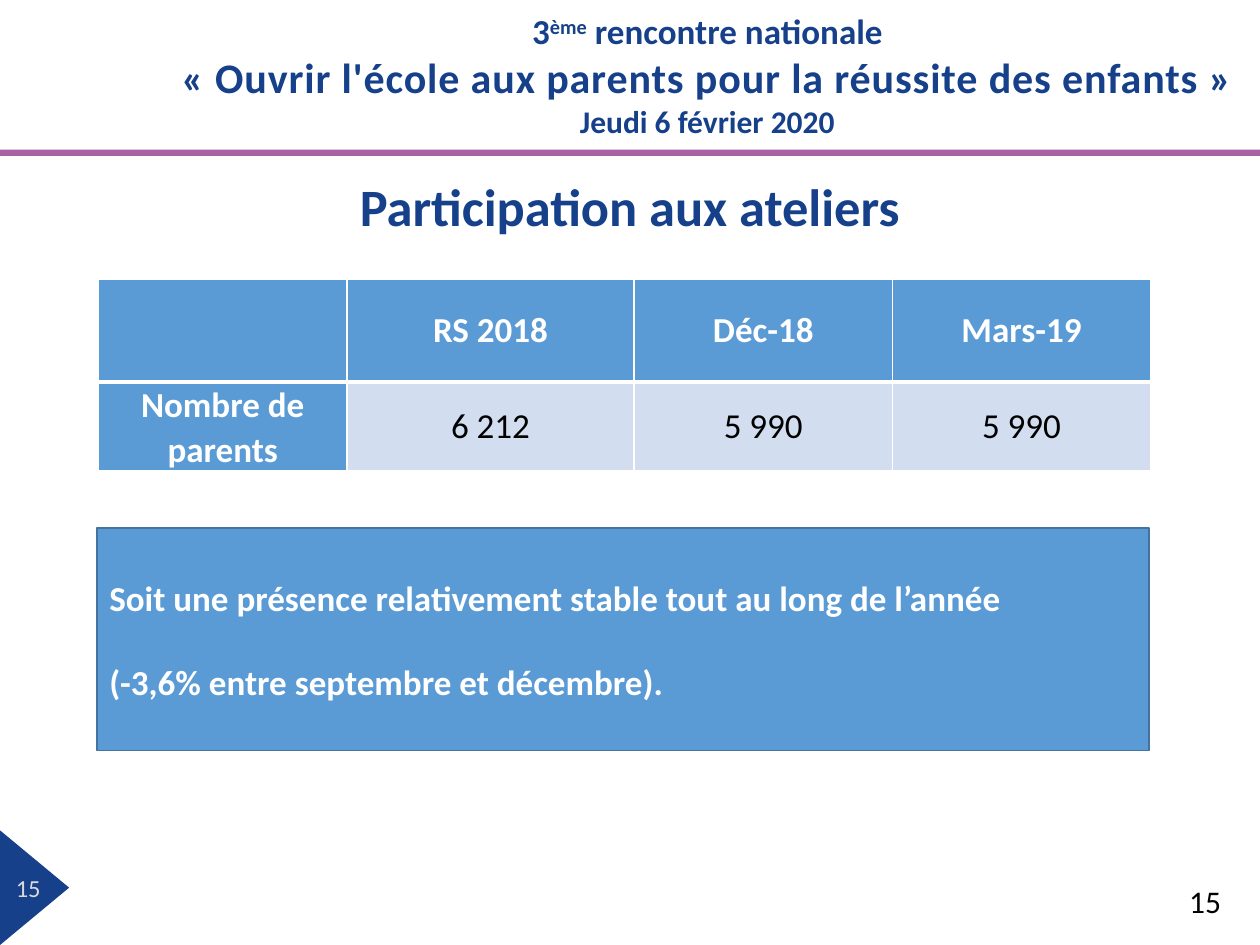
from dataclasses import dataclass

from lxml.etree import SubElement
from pptx import Presentation
from pptx.dml.color import RGBColor
from pptx.enum.shapes import MSO_SHAPE
from pptx.enum.text import MSO_ANCHOR, PP_ALIGN
from pptx.oxml.ns import qn
from pptx.util import Pt


@dataclass(frozen=True)
class Theme:
    font: str = "Calibri"
    navy: str = "16408A"
    purple: str = "A863A4"
    blue: str = "5B9BD5"
    blue_edge: str = "43739E"
    pale: str = "D2DEEF"
    grey: str = "D9D9D9"
    white: str = "FFFFFF"
    black: str = "000000"
    title: int = 30
    banner: int = 24
    body: int = 20
    small: int = 18
    badge: int = 14


T = Theme()


def rgb(color):
    return RGBColor.from_string(color)


def add_run(p, text, size=T.body, color=T.navy, bold=False, raised=0, spacing=0):
    r = p.add_run()
    r.text = text
    f = r.font
    f.name, f.size, f.bold = T.font, Pt(size), bold
    f.color.rgb = rgb(color)
    rPr = r._r.get_or_add_rPr()
    if raised:
        rPr.set("baseline", str(raised * 1000))
    if spacing:
        rPr.set("spc", str(int(spacing * 100)))
    return r


def write(tf, text, first=True, align=PP_ALIGN.LEFT, line=None, before=None, **fmt):
    p = tf.paragraphs[0] if first else tf.add_paragraph()
    p.alignment = align
    if line:
        p.line_spacing = line
    if before:
        p.space_before = Pt(before)
    add_run(p, text, **fmt)
    return p


def place(sp, box):
    sp.left, sp.top, sp.width, sp.height = (Pt(v) for v in box)


def set_frame(tf, anchor=MSO_ANCHOR.MIDDLE, inset=None):
    tf.word_wrap = True
    tf.vertical_anchor = anchor
    if inset is not None:
        tf.margin_left = tf.margin_right = tf.margin_top = tf.margin_bottom = Pt(inset)
    return tf


def add_text(s, box, **frame):
    return set_frame(s.shapes.add_textbox(*(Pt(v) for v in box)).text_frame, **frame)


def paint(sp, fill, edge=None):
    sp.shadow.inherit = False
    sp.fill.solid()
    sp.fill.fore_color.rgb = rgb(fill)
    if edge:
        sp.line.color.rgb = rgb(edge)
        sp.line.width = Pt(1)
    else:
        sp.line.fill.background()


def add_box(s, kind, box, fill, edge=None):
    sp = s.shapes.add_shape(kind, *(Pt(v) for v in box))
    paint(sp, fill, edge)
    return sp


def add_banner(s, box, indent, rule):
    x, y, w, h = box
    tf = add_text(s, (x + indent, y, w - indent, h))
    fmt = dict(align=PP_ALIGN.CENTER, bold=True)
    p = write(tf, "3", **fmt)
    add_run(p, "ème", bold=True, raised=30)
    add_run(p, " rencontre nationale", bold=True)
    write(tf, "« Ouvrir l'école aux parents pour la réussite des enfants »",
          first=False, size=T.banner, spacing=0.5, **fmt)
    write(tf, "Jeudi 6 février 2020", first=False, size=T.small, **fmt)
    add_box(s, MSO_SHAPE.RECTANGLE, (x, y + h, w, rule), T.purple)


def add_badge(s, box, number):
    x, y, w, h = box
    fb = s.shapes.build_freeform(Pt(x), Pt(y))
    fb.add_line_segments([(Pt(x), Pt(y + h)), (Pt(x + w), Pt(y + h / 2))], close=True)
    paint(fb.convert_to_shape(), T.navy)
    tf = add_text(s, (x - 3.6, y + 20, w, 25), inset=3)
    write(tf, number, align=PP_ALIGN.CENTER, size=T.badge, color=T.grey)


def add_title(s, box, text):
    sp = s.shapes.title
    place(sp, box)
    set_frame(sp.text_frame)
    write(sp.text_frame, text, align=PP_ALIGN.CENTER, line=0.9, size=T.title, bold=True)


def set_borders(cell, widths):
    tcPr = cell._tc.get_or_add_tcPr()
    for i, (side, width) in enumerate(widths.items()):
        ln = SubElement(tcPr, qn(f"a:ln{side}"), w=str(Pt(width)))
        fill = SubElement(ln, qn("a:solidFill"))
        SubElement(fill, qn("a:srgbClr"), val=T.white)
        tcPr.insert(i, ln)


def add_attendance(s, box, widths, heights, rows):
    tbl = s.shapes.add_table(len(rows), len(widths), *(Pt(v) for v in box)).table
    for col, width in zip(tbl.columns, widths):
        col.width = Pt(width)
    for row, height in zip(tbl.rows, heights):
        row.height = Pt(height)
    for i, values in enumerate(rows):
        for j, value in enumerate(values):
            cell = tbl.cell(i, j)
            head = i == 0 or j == 0
            cell.vertical_anchor = MSO_ANCHOR.MIDDLE
            cell.margin_left = cell.margin_right = Pt(3.6)
            cell.margin_top = cell.margin_bottom = 0
            cell.fill.solid()
            cell.fill.fore_color.rgb = rgb(T.blue if head else T.pale)
            set_borders(cell, {"L": 1, "R": 1, "T": 3 if i else 1, "B": 1 if i else 3})
            if value:
                write(cell.text_frame, value, align=PP_ALIGN.CENTER, bold=head,
                      line=1.05 if i and head else None,
                      color=T.white if head else T.black)


def add_comment(s, box, lines):
    sp = add_box(s, MSO_SHAPE.FLOWCHART_PROCESS, box, T.blue, T.blue_edge)
    tf = set_frame(sp.text_frame)
    for i, text in enumerate(lines):
        write(tf, text, first=i == 0, before=24 if i else None, color=T.white, bold=True)


def add_page_number(s, box, number):
    tf = add_text(s, box, anchor=MSO_ANCHOR.TOP)
    write(tf, number, size=T.small, color=T.black)


def main():
    prs = Presentation()
    prs.slide_width, prs.slide_height = Pt(720), Pt(540)
    s = prs.slides.add_slide(prs.slide_layouts[5])
    add_banner(s, (0, 0, 720, 85.5), indent=88.5, rule=3.6)
    add_badge(s, (0, 474.5, 39.5, 65.5), "15")
    add_title(s, (0, 99.4, 720, 40.3), "Participation aux ateliers")
    add_page_number(s, (672.5, 500.4, 44, 29), "15")
    add_attendance(s, (56.4, 159.4, 601.2, 109.4), (141.8, 164.2, 147.6, 147.6), (59, 50.4), [
        ("", "RS 2018", "Déc-18", "Mars-19"),
        ("Nombre de parents", "6 212", "5 990", "5 990"),
    ])
    add_comment(s, (55.4, 301.7, 601.2, 127.2), [
        "Soit une présence relativement stable tout au long de l’année",
        "(-3,6% entre septembre et décembre).",
    ])
    prs.save("out.pptx")


if __name__ == "__main__":
    main()
